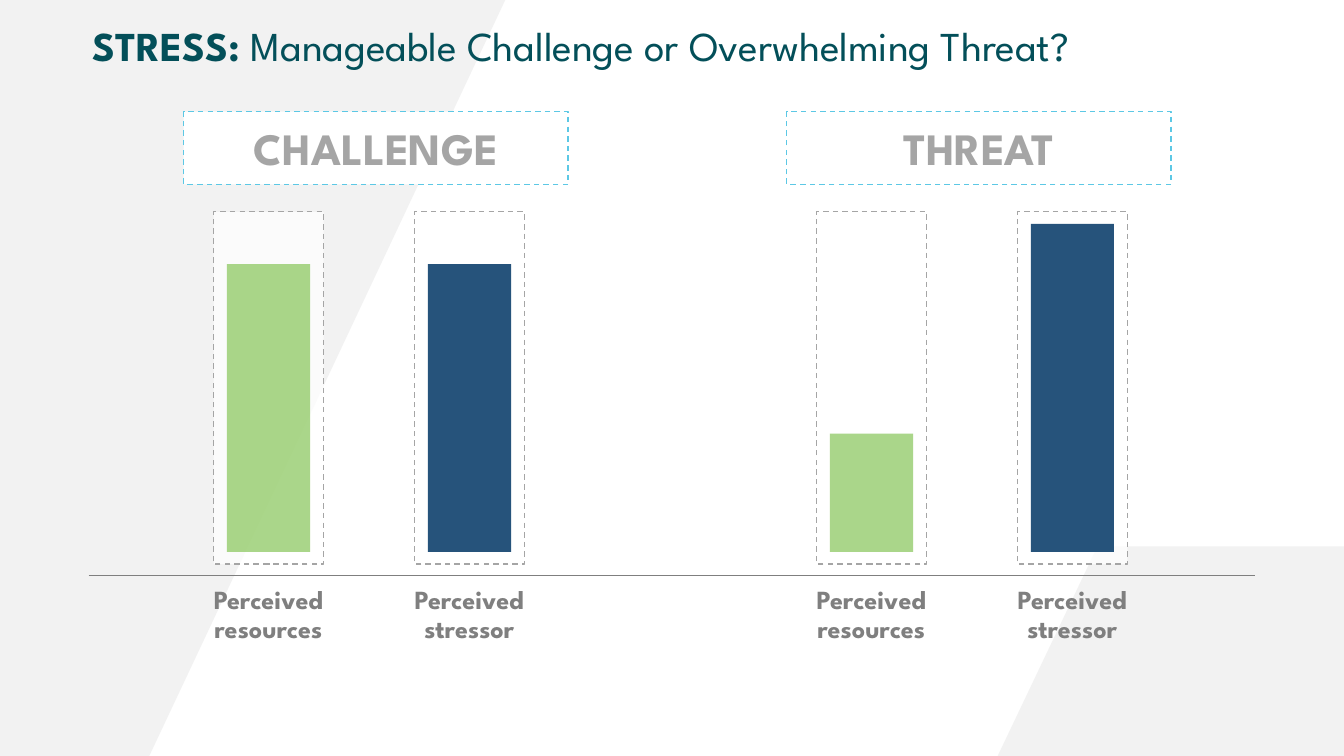
from lxml import etree
from pptx import Presentation
from pptx.dml.color import RGBColor
from pptx.enum.dml import MSO_LINE
from pptx.enum.shapes import MSO_CONNECTOR, MSO_SHAPE
from pptx.enum.text import MSO_ANCHOR, MSO_AUTO_SIZE, PP_ALIGN
from pptx.oxml.ns import qn
from pptx.util import Pt

RECTANGLE = MSO_SHAPE.RECTANGLE
STRAIGHT = MSO_CONNECTOR.STRAIGHT
DASH = MSO_LINE.DASH
CENTER, LEFT = PP_ALIGN.CENTER, PP_ALIGN.LEFT
TOP, MIDDLE = MSO_ANCHOR.TOP, MSO_ANCHOR.MIDDLE
NO_AUTOFIT = MSO_AUTO_SIZE.NONE

FONT = "League Spartan"
TITLE_ONLY = 5
WIDTH, HEIGHT = 720, 405
GREEN, NAVY, WHITE = "8AC75D", "26537B", "FFFFFF"
LIGHT_GRAY, GRAY, DARK_GRAY = "F2F2F2", "A5A5A5", "7F7F7F"
CYAN, TEAL = "5CC8E5", "034F59"
SEE_THROUGH = 72  # percent opacity


def color(hex_string):
    return RGBColor.from_string(hex_string)


def paint(shape, fill, opacity=100, outline=None):
    shape.shadow.inherit = False
    shape.fill.solid()
    shape.fill.fore_color.rgb = color(fill)
    if opacity < 100:
        fill_color = shape.element.spPr.find(qn("a:solidFill"))[0]
        etree.SubElement(fill_color, qn("a:alpha"), val=str(opacity * 1000))
    if outline:
        shape.line.color.rgb = color(outline)
        shape.line.width = Pt(0.75)
        shape.line.dash_style = DASH
    else:
        shape.line.fill.background()


def add_rectangle(slide, box, fill, opacity=100, outline=None):
    rectangle = slide.shapes.add_shape(RECTANGLE, *map(Pt, box))
    paint(rectangle, fill, opacity, outline)


def format_text(frame, size, hex_color, align, anchor, spacing, inset):
    frame.word_wrap = True
    frame.auto_size = NO_AUTOFIT
    frame.vertical_anchor = anchor
    frame.margin_left = frame.margin_right = Pt(inset)
    frame.margin_top = frame.margin_bottom = Pt(inset)
    paragraph = frame.paragraphs[0]
    paragraph.alignment = align
    paragraph.line_spacing = spacing
    paragraph.font.name = FONT
    paragraph.font.size = Pt(size)
    paragraph.font.color.rgb = color(hex_color)
    return paragraph


def add_label(slide, box, text, size, hex_color, anchor=TOP, spacing=1.0):
    frame = slide.shapes.add_textbox(*map(Pt, box)).text_frame
    frame.text = text
    paragraph = format_text(frame, size, hex_color, CENTER, anchor, spacing, 0)
    paragraph.font.bold = True


def add_backdrop(slide, points):
    builder = slide.shapes.build_freeform(*map(Pt, points[0]))
    builder.add_line_segments([(Pt(x), Pt(y)) for x, y in points[1:]])
    paint(builder.convert_to_shape(), LIGHT_GRAY)


def add_baseline(slide, left, right, y):
    baseline = slide.shapes.add_connector(
        STRAIGHT, Pt(left), Pt(y), Pt(right), Pt(y))
    baseline.line.color.rgb = color(DARK_GRAY)
    baseline.line.width = Pt(0.75)
    etree.SubElement(baseline.element.spPr, qn("a:effectLst"))


def add_comparison(slide, box, heading, bars):
    """Heading box above two framed bars, each with a caption below."""
    left, top, width, height = box

    # Heading
    add_rectangle(slide, (left, top, width, 39), WHITE, outline=CYAN)
    add_label(slide, (left + 20, top + 5, width - 40, 29), heading, 24, GRAY,
              MIDDLE)

    # Framed bars and captions
    bottom = top + height
    frame_top = top + 53.7
    frame_bottom = bottom - 14.5
    for index, (caption, bar_height, fill, opacity) in enumerate(bars):
        middle = left + 45.5 + index * 107.6
        add_rectangle(
            slide, (middle - 29.5, frame_top, 59, frame_bottom - frame_top),
            WHITE, SEE_THROUGH, GRAY)
        add_rectangle(
            slide, (middle - 22.3, frame_bottom - 6.6 - bar_height, 44.6,
                    bar_height), fill, opacity)
        add_label(slide, (middle - 40, bottom - 3, 80, 32), caption, 14,
                  DARK_GRAY, spacing=0.93)


def add_title(slide, box, lead, rest):
    title = slide.shapes.title
    title.left, title.top, title.width, title.height = map(Pt, box)
    frame = title.text_frame
    paragraph = format_text(frame, 22, TEAL, LEFT, TOP, 0.9, 7.2)
    for text, bold in ((lead, True), (rest, False)):
        run = paragraph.add_run()
        run.text = text
        run.font.bold = bold
    # Bring the title in front of the backdrop
    title.element.getparent().append(title.element)


def main():
    presentation = Presentation()
    presentation.slide_width = Pt(WIDTH)
    presentation.slide_height = Pt(HEIGHT)
    slide = presentation.slides.add_slide(
        presentation.slide_layouts[TITLE_ONLY])

    # Slanted backdrop areas
    add_backdrop(slide, [(0, 0), (270.7, 0), (80, HEIGHT), (0, HEIGHT)])
    add_backdrop(slide, [(588, 292.7), (WIDTH, 292.7), (WIDTH, HEIGHT),
                         (534.5, HEIGHT)])

    # Comparisons: heading, left edge, resources height, stressor height
    add_baseline(slide, 47.5, 672.5, 308.2)
    for heading, left, resources, stressor in (
            ("CHALLENGE", 98.4, 154.1, 154.1),
            ("THREAT", 421.4, 63.4, 175.7)):
        add_comparison(slide, (left, 59.8, 206, 257), heading, [
            ("Perceived resources", resources, GREEN, SEE_THROUGH),
            ("Perceived stressor", stressor, NAVY, 100)])

    add_title(slide, (42.5, 6.5, 634.3, 38.9), "STRESS: ",
              "Manageable Challenge or Overwhelming Threat?")
    presentation.save("out.pptx")


if __name__ == "__main__":
    main()
